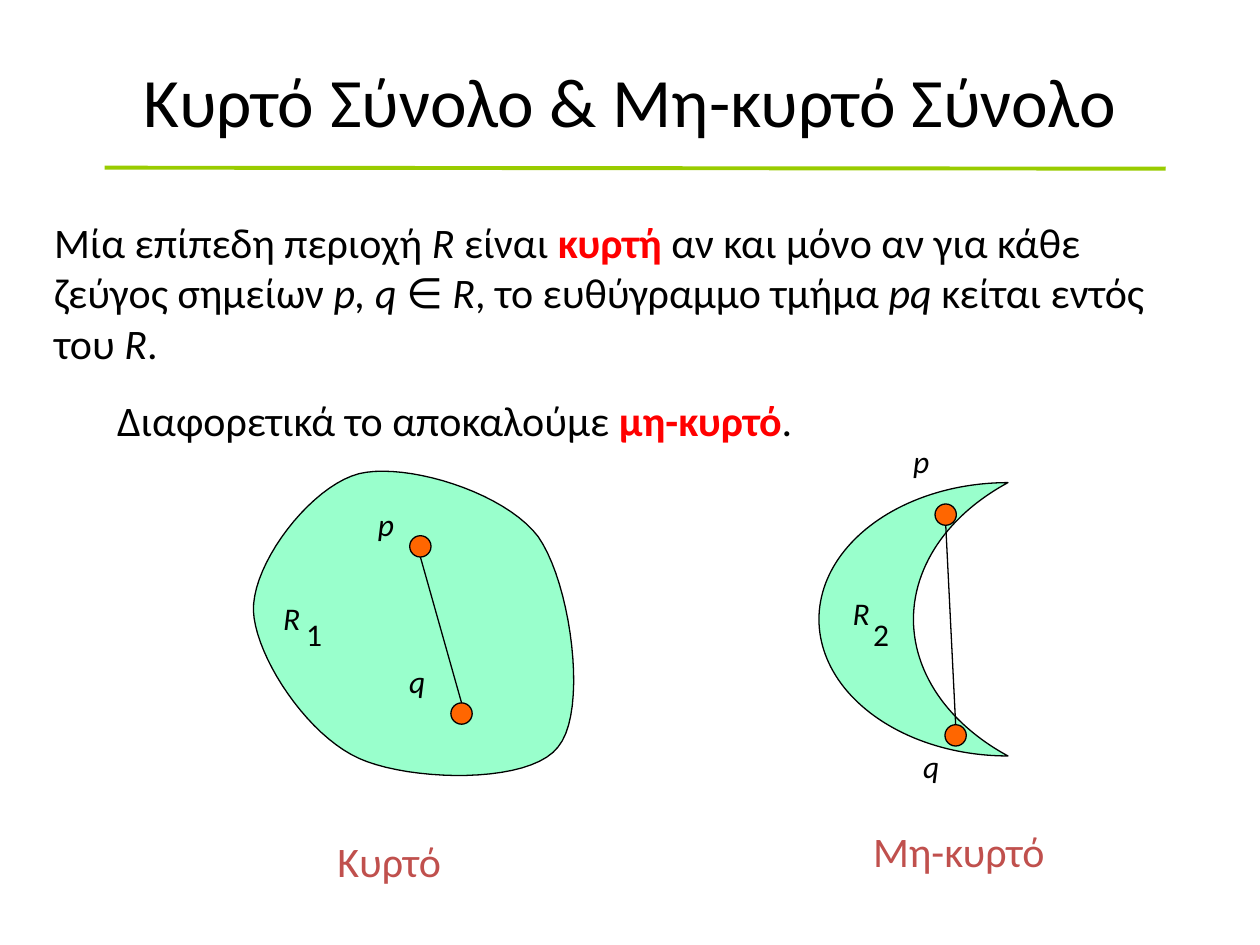
"""Builds the slide on convex and non-convex sets."""
from lxml import etree
from pptx import Presentation, util as u
from pptx.dml.color import RGBColor
from pptx.enum import shapes, text
from pptx.oxml.ns import qn

BLACK, RED, BRICK = "000000", "FF0000", "C0504D"
MINT, ORANGE, GREEN = "99FFCC", "FF6600", "99CC00"
Cm, rgb = u.Cm, RGBColor.from_string


def add_text(box, runs, size=18, wrap=False, anchor="TOP", align="LEFT"):
    tf = s.shapes.add_textbox(*map(Cm, box)).text_frame
    fit = text.MSO_AUTO_SIZE.NONE if anchor == "MIDDLE" else text.MSO_AUTO_SIZE.SHAPE_TO_FIT_TEXT
    frame = {"word_wrap": wrap, "auto_size": fit,
             "vertical_anchor": text.MSO_ANCHOR[anchor]}
    for name, value in frame.items():
        setattr(tf, name, value)
    p = tf.paragraphs[0]
    p.alignment = text.PP_ALIGN[align]
    for words, style in runs:
        r = p.add_run()
        r.text = words
        font = {"name": "Calibri", "size": u.Pt(size), "bold": False, "italic": False} | style
        r.font.color.rgb = rgb(font.pop("color", BLACK))
        for name, value in font.items():
            setattr(r.font, name, value)


def paint(sp, line=BLACK, width=0.75, fill=None):
    sp.line.color.rgb = rgb(line)
    sp.line.width = u.Pt(width)
    if fill:
        sp.shadow.inherit = False
        sp.fill.solid()
        sp.fill.fore_color.rgb = rgb(fill)
    else:
        etree.SubElement(sp._element.spPr, qn("a:effectLst"))


prs = Presentation()
prs.slide_width, prs.slide_height = Cm(25.4), Cm(19.05)
s = prs.slides.add_slide(prs.slide_layouts[6])

plain, italic = {}, {"italic": True}
strong = {"bold": True, "color": RED}
straight = shapes.MSO_CONNECTOR.STRAIGHT

add_text((1.9, 0.43, 21.59, 3.18), [("Κυρτό Σύνολο & Μη-κυρτό Σύνολο", plain)],
         39.6, True, "MIDDLE", "CENTER")
add_text((0.84, 4.24, 22.5, 3.33), [
    ("Μία επίπεδη περιοχή ", plain), ("R ", italic), ("είναι ", plain),
    ("κυρτή ", strong), ("αν και μόνο αν για κάθε ζεύγος σημείων ", plain),
    ("p, q ", italic), ("∈ ", plain), ("R", italic),
    (", το ευθύγραμμο τμήμα ", plain), ("pq ", italic),
    ("κείται εντός του ", plain), ("R", italic), (".", plain)], 24, True)
paint(s.shapes.add_connector(straight, Cm(2.11), Cm(3.38), Cm(23.5), Cm(3.4)), GREEN, 2.25)
add_text((2.11, 7.82, 14.43, 1.27), [
    ("Διαφορετικά το αποκαλούμε ", plain), ("μη-κυρτό", strong), (".", plain)], 24)

start = (7.24, 9.55)
curves = [
    ((8.18, 9.32), (10.16, 9.91), (10.85, 10.82)),
    ((11.51, 11.76), (11.86, 14.33), (11.25, 15.06)),
    ((10.67, 15.82), (8.26, 15.75), (7.24, 15.29)),
    ((6.2, 14.83), (5.16, 13.26), (5.11, 12.32)),
    ((5.08, 11.35), (6.27, 9.8), start),
]
steps = 20
outline, a = [], start
for b, c, d in curves:
    for t in (i / steps for i in range(1, steps + 1)):
        weights = (1 - t) ** 3, 3 * t * (1 - t) ** 2, 3 * t * t * (1 - t), t ** 3
        outline.append([Cm(sum(w * v for w, v in zip(weights, axis)))
                        for axis in zip(a, b, c, d)])
    a = d
blob = s.shapes.build_freeform(Cm(start[0]), Cm(start[1]))
blob.add_line_segments(outline, close=True)
paint(blob.convert_to_shape(), fill=MINT)

moon = s.shapes.add_shape(shapes.MSO_SHAPE.MOON, Cm(16.51), Cm(9.73), Cm(3.81), Cm(5.51))
moon.adjustments[0] = 0.5
paint(moon, fill=MINT)

dot = 0.43
regions = [
    {"dots": [(8.26, 10.8), (9.09, 14.17)], "p": (7.37, 10.06), "q": (8, 13.23),
     "R": (5.46, 11.96), "index": ("1", 5.92), "caption": ("Κυρτό", 6.55, 16.71, 2.62)},
    {"dots": [(18.85, 10.16), (19.05, 14.61)], "p": (18.16, 8.79), "q": (18.36, 14.94),
     "R": (16.94, 11.86), "index": ("2", 17.35), "caption": ("Μη-κυρτό", 17.35, 16.51, 4.01)},
]
for region in regions:
    for x, y in region["dots"]:
        sp = s.shapes.add_shape(shapes.MSO_SHAPE.OVAL, Cm(x), Cm(y), Cm(dot), Cm(dot))
        paint(sp, fill=ORANGE)
    (x1, y1), (x2, y2) = region["dots"]
    ends = x1 + dot / 2, y1 + dot, x2 + dot / 2, y2
    paint(s.shapes.add_connector(straight, *map(Cm, ends)))
    for letter, width in (("p", 0.94), ("q", 0.94), ("R", 1.02)):
        add_text((*region[letter], width, 1.27), [(letter, italic)])
    digit, x = region["index"]
    add_text((x, 12.27, 0.84, 1.02), [(digit, plain)])
    words, x, y, width = region["caption"]
    add_text((x, y, width, 1.3), [(words, {"color": BRICK})], 24)

prs.save("out.pptx")
